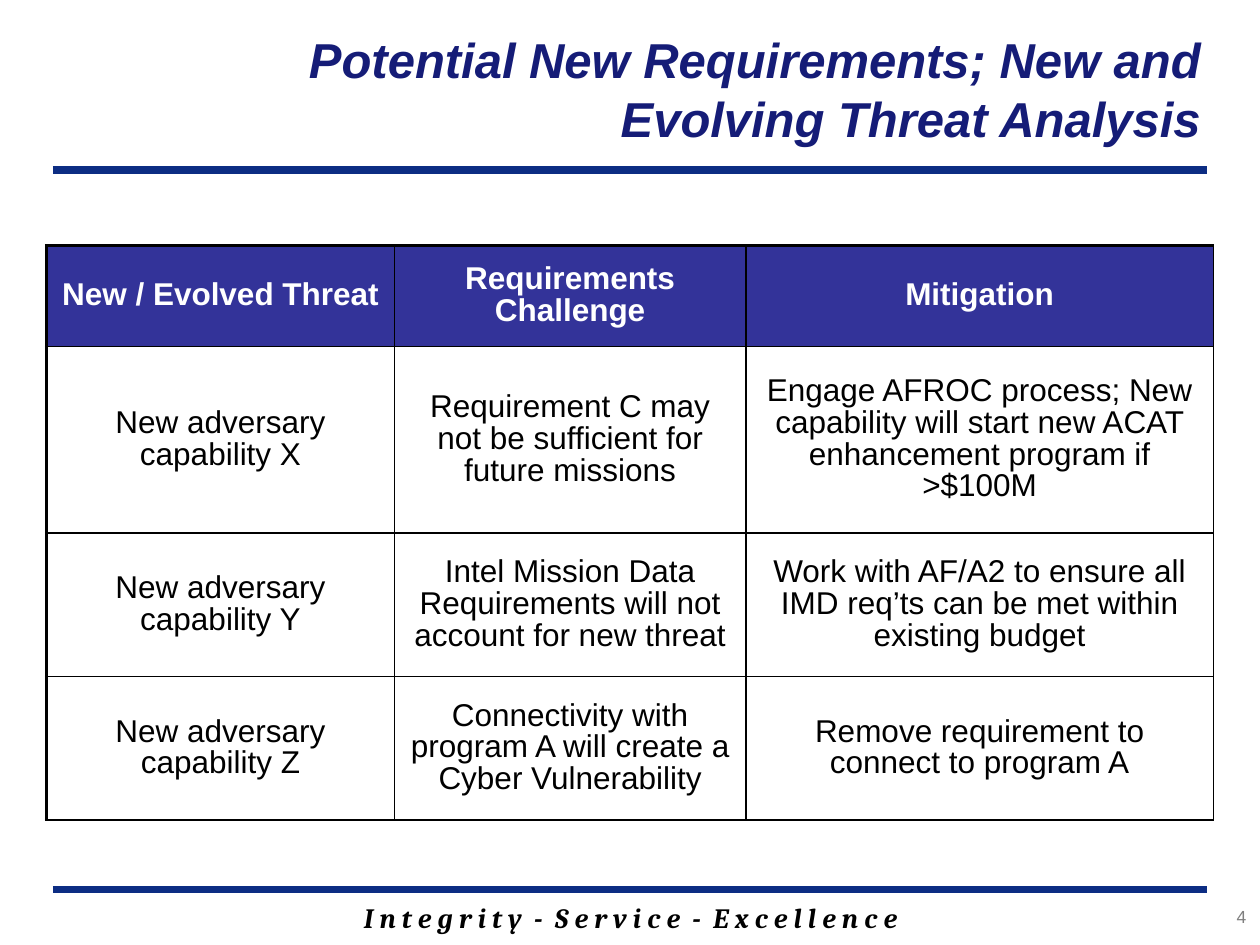
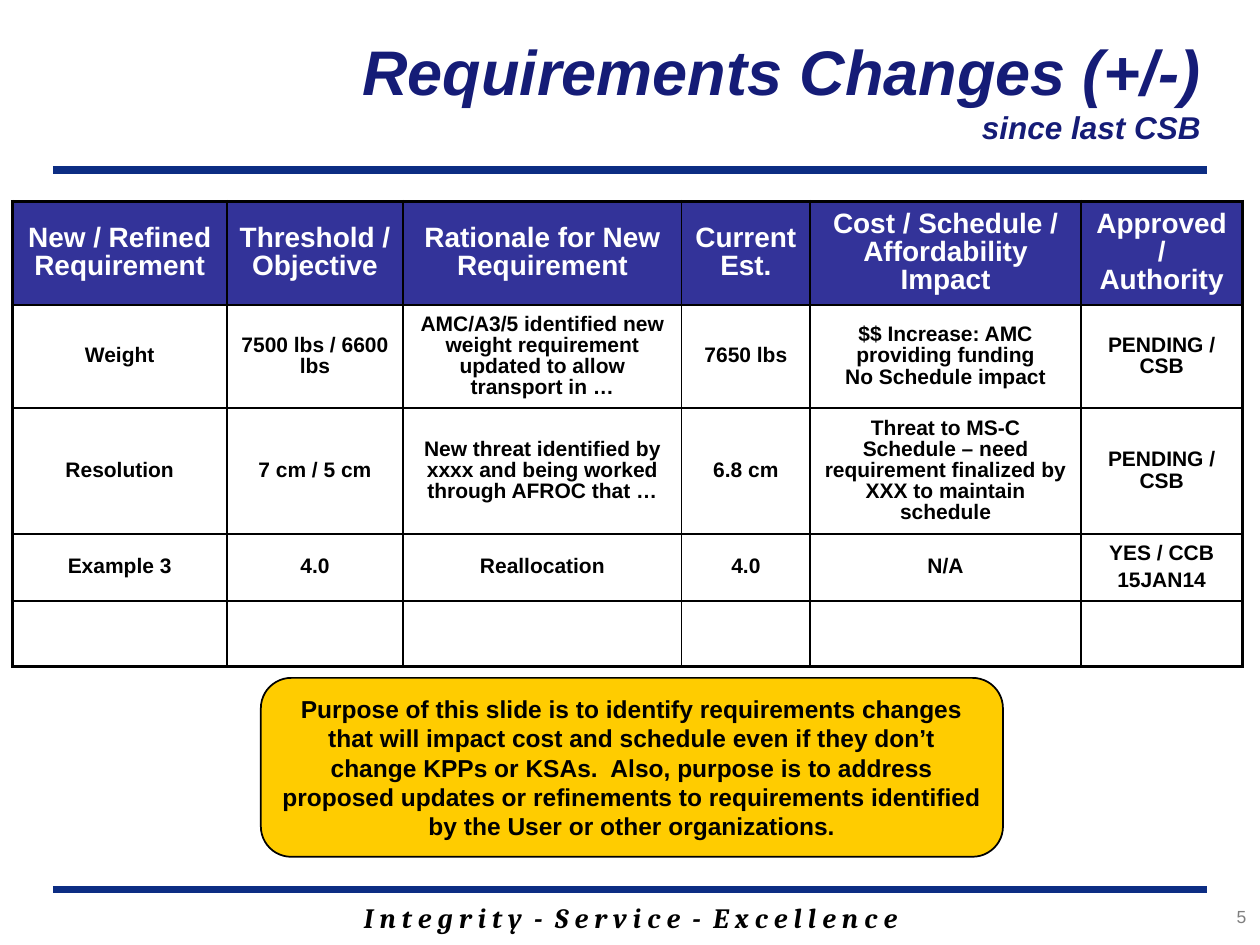
from copy import deepcopy
from dataclasses import dataclass

from lxml.etree import SubElement
from pptx import Presentation
from pptx.dml.color import RGBColor
from pptx.enum.shapes import MSO_CONNECTOR, MSO_SHAPE
from pptx.enum.text import MSO_ANCHOR, MSO_AUTO_SIZE, PP_ALIGN
from pptx.oxml.ns import qn
from pptx.util import Inches, Pt


@dataclass(frozen=True)
class Theme:
    """Colours, fonts and type sizes shared by all slides."""
    title: str = "151C77"
    rule: str = "0C2D83"
    header: str = "333399"
    callout: str = "FFCC00"
    ink: str = "000000"
    paper: str = "FFFFFF"
    muted: str = "7F7F7F"
    font: str = "Arial"
    motto_font: str = "Cambria"
    title_size: int = 28
    big_title_size: int = 36
    subtitle_size: int = 18
    motto_size: int = 16
    number_size: int = 10
    callout_size: int = 14
    thin: float = 1
    thick: float = 2.25
    rule_width: float = 4.5


THEME = Theme()
MOTTO = "I n t e g r i t y  -  S e r v i c e  -  E x c e l l e n c e"


def rgb(code):
    return RGBColor.from_string(code)


def write(frame, text, *, sizes, color=THEME.ink, font=THEME.font, bold=False,
          italic=False, align=PP_ALIGN.CENTER, anchor=None, spacing=None, gap=0):
    """Fill a frame; a list gives paragraphs, a newline breaks a line.

    sizes holds one size per line; the last one serves all further lines.
    """
    frame.word_wrap = True
    if anchor is not None:
        frame.vertical_anchor = anchor
    for index, content in enumerate([text] if isinstance(text, str) else text):
        paragraph = frame.add_paragraph() if index else frame.paragraphs[0]
        paragraph.alignment = align
        if spacing:
            paragraph.line_spacing = spacing
        if index:
            paragraph.space_before = Pt(gap)
        lines = content.split("\n")
        for number, line in enumerate(lines):
            run = paragraph.add_run()
            run.text = line
            run.font.size = Pt(sizes[min(number, len(sizes) - 1)])
            run.font.name = font
            run.font.bold = bold
            run.font.italic = italic
            run.font.color.rgb = rgb(color)
            if number < len(lines) - 1:
                paragraph.add_line_break()
                paragraph._p[-1].append(deepcopy(run._r.rPr))


def set_borders(cell, widths):
    """Draw the borders in the order left, right, top, bottom."""
    properties = cell._tc.get_or_add_tcPr()
    for side, width in zip("LRTB", widths):
        line = SubElement(properties, qn(f"a:ln{side}"), w=str(Pt(width)))
        fill = SubElement(line, qn("a:solidFill"))
        SubElement(fill, qn("a:srgbClr"), val=THEME.ink)


class Deck:
    def __init__(self, theme):
        self.theme = theme
        self.presentation = Presentation()
        self.presentation.slide_width = Inches(10)
        self.presentation.slide_height = Inches(7.5)
        self.slide = None

    def new_slide(self, title, number, title_sizes):
        theme = self.theme
        self.slide = self.presentation.slides.add_slide(
            self.presentation.slide_layouts[5])
        # Rules and footer
        for y in (7.06, 1.35):
            self.rule(y)
        self.label(MOTTO, (0.42, 7.1, 9.17, 0.37), sizes=[theme.motto_size],
                   font=theme.motto_font, bold=True, italic=True)
        self.label(number, (8.74, 7.14, 1.25, 0.33), sizes=[theme.number_size],
                   color=theme.muted, align=PP_ALIGN.RIGHT)
        # Title
        heading = self.slide.shapes.title
        heading.left, heading.top = Inches(1.82), Inches(0.08)
        heading.width, heading.height = Inches(7.81), Inches(1.25)
        heading.text_frame.auto_size = MSO_AUTO_SIZE.NONE
        write(heading.text_frame, title, sizes=title_sizes, color=theme.title,
              bold=True, italic=True, align=PP_ALIGN.RIGHT,
              anchor=MSO_ANCHOR.MIDDLE)

    def rule(self, y):
        line = self.slide.shapes.add_connector(
            MSO_CONNECTOR.STRAIGHT, Inches(0.42), Inches(y), Inches(9.58), Inches(y))
        line.line.color.rgb = rgb(self.theme.rule)
        line.line.width = Pt(self.theme.rule_width)
        SubElement(line._element.spPr, qn("a:effectLst"))

    def label(self, text, box, **style):
        area = self.slide.shapes.add_textbox(*map(Inches, box))
        write(area.text_frame, text, **style)

    def table(self, rows, box, widths, heights, *, header_size, body_size,
              body_bold, thick_sides):
        theme = self.theme
        grid = self.slide.shapes.add_table(
            len(rows), len(widths), *map(Inches, box)).table
        grid.first_row = grid.horz_banding = False
        for column, width in zip(grid.columns, widths):
            column.width = Inches(width)
        for row, height in zip(grid.rows, heights):
            row.height = Inches(height)
        for r, row in enumerate(rows):
            is_header = r == 0
            for c, text in enumerate(row):
                cell = grid.cell(r, c)
                outer = {"L": c == 0, "R": c == len(row) - 1,
                         "T": is_header, "B": r == len(rows) - 1}
                set_borders(cell, [theme.thick if outer[side] and side in thick_sides
                                   else theme.thin for side in "LRTB"])
                cell.vertical_anchor = MSO_ANCHOR.MIDDLE
                if is_header:
                    cell.fill.solid()
                    cell.fill.fore_color.rgb = rgb(theme.header)
                else:
                    cell.fill.background()
                if text:
                    size = header_size if is_header else body_size
                    write(cell.text_frame, text, sizes=[size],
                          bold=is_header or body_bold, spacing=0.9, gap=size / 4,
                          color=theme.paper if is_header else theme.ink)

    def callout(self, text, box):
        theme = self.theme
        bubble = self.slide.shapes.add_shape(
            MSO_SHAPE.ROUNDED_RECTANGULAR_CALLOUT, *map(Inches, box))
        for index, value in enumerate((-0.34, -0.5, 0.17)):
            bubble.adjustments[index] = value
        bubble.shadow.inherit = False
        bubble.fill.solid()
        bubble.fill.fore_color.rgb = rgb(theme.callout)
        bubble.line.color.rgb = rgb(theme.ink)
        bubble.line.width = Pt(theme.thin)
        write(bubble.text_frame, text, sizes=[theme.callout_size], bold=True,
              anchor=MSO_ANCHOR.MIDDLE)


def add_threat_slide(deck):
    deck.new_slide("Potential New Requirements; New and Evolving Threat Analysis",
                   "4", [THEME.title_size])
    threats = [
        ("New / Evolved Threat", "Requirements Challenge", "Mitigation"),
        ("New adversary capability X",
         "Requirement C may not be sufficient for future missions",
         "Engage AFROC process; New capability will start new ACAT "
         "enhancement program if >$100M"),
        ("New adversary capability Y",
         "Intel Mission Data Requirements will not account for new threat",
         "Work with AF/A2 to ensure all IMD req’ts can be met within existing budget"),
        ("New adversary capability Z",
         "Connectivity with program A will create a Cyber Vulnerability",
         "Remove requirement to connect to program A"),
    ]
    deck.table(threats, (0.37, 1.95, 9.26, 4.57), [2.76, 2.79, 3.71],
               [0.8, 1.48, 1.14, 1.14], header_size=18, body_size=18,
               body_bold=False, thick_sides="LT")


def add_changes_slide(deck):
    deck.new_slide("Requirements Changes (+/-)\nsince last CSB", "5",
                   [THEME.big_title_size, THEME.subtitle_size])
    changes = [
        ("New / Refined Requirement", "Threshold / Objective",
         "Rationale for New Requirement", "Current Est.",
         "Cost / Schedule / Affordability Impact", "Approved / Authority"),
        ("Weight", "7500 lbs / 6600 lbs",
         "AMC/A3/5 identified new weight requirement updated to allow transport in …",
         "7650 lbs", "$$ Increase: AMC providing funding\nNo Schedule impact",
         "PENDING / CSB"),
        ("Resolution", "7 cm / 5 cm",
         "New threat identified by xxxx and being worked through AFROC that …",
         "6.8 cm",
         "Threat to MS-C Schedule – need requirement finalized by XXX "
         "to maintain schedule",
         "PENDING / CSB"),
        ("Example 3", "4.0", "Reallocation", "4.0", "N/A", ["YES / CCB", "15JAN14"]),
        ("",) * 6,
    ]
    deck.table(changes, (0.1, 1.6, 9.77, 3.69), [1.7, 1.4, 2.21, 1.02, 2.15, 1.28],
               [0.82, 0.82, 1, 0.53, 0.52], header_size=16, body_size=12,
               body_bold=True, thick_sides="LRTB")
    deck.callout(
        "Purpose of this slide is to identify requirements changes that will impact "
        "cost and schedule even if they don’t change KPPs or KSAs.  Also, purpose is "
        "to address proposed updates or refinements to requirements identified by "
        "the User or other organizations.", (2.07, 5.38, 5.89, 1.42))


def main():
    deck = Deck(THEME)
    add_threat_slide(deck)
    add_changes_slide(deck)
    deck.presentation.save("out.pptx")


if __name__ == "__main__":
    main()
